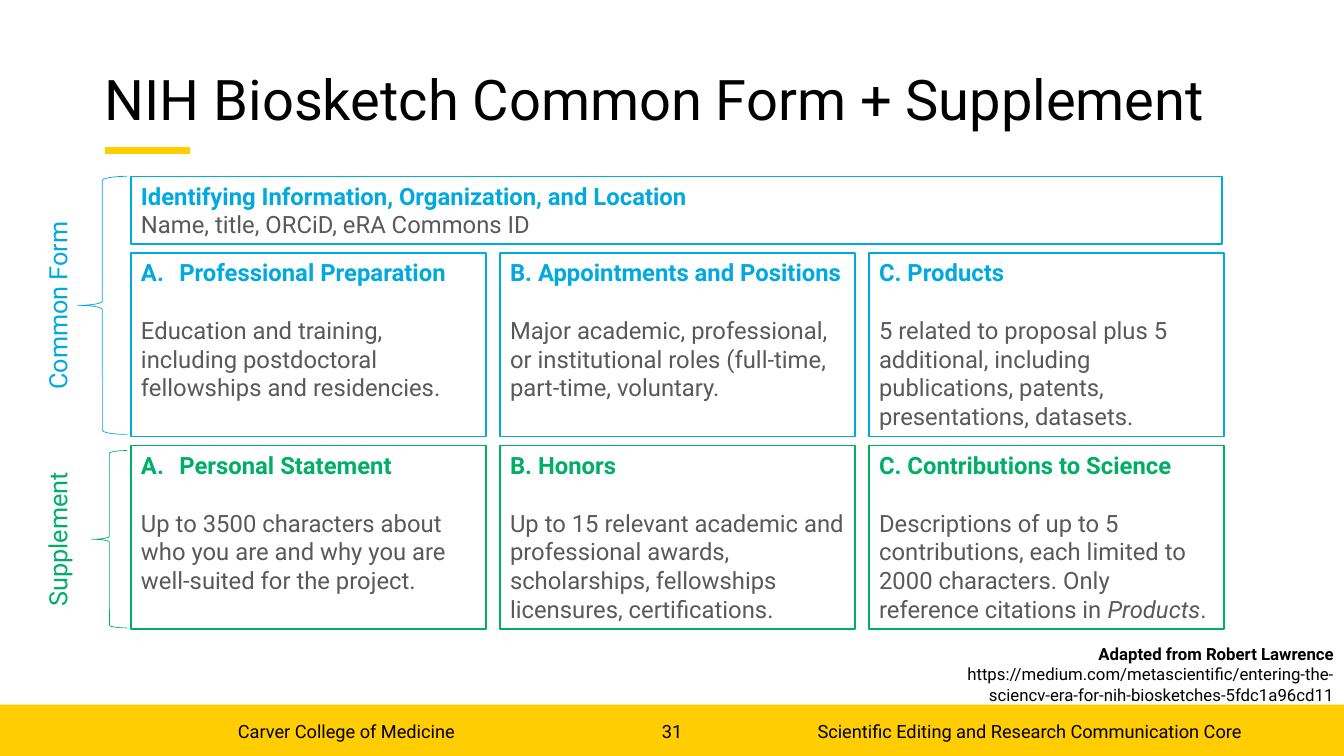
from lxml import etree
from pptx import Presentation
from pptx.dml.color import RGBColor
from pptx.enum.shapes import MSO_CONNECTOR, MSO_SHAPE
from pptx.enum.text import MSO_ANCHOR, MSO_AUTO_SIZE, PP_ALIGN
from pptx.oxml.ns import qn
from pptx.util import Inches, Pt

FONT = "Roboto"
BLACK, GRAY, GOLD, BLUE, GREEN = "000000", "595959", "FFCD00", "00A9E0", "00AF66"

TITLE = "NIH Biosketch Common Form + Supplement"
IDENTITY = ("Identifying Information, Organization, and Location",
            ["Name, title, ORCiD, eRA Commons ID"])

# Each section: name, colour, top of its boxes, brace (left, top, width, height),
# centre of the side label, and its boxes. Every second span of a body is italic.
SECTIONS = [
    ("Common Form", BLUE, 2.51, (0.77, 1.75, 0.49, 2.56), 3.03, [
        ("Professional Preparation",
         ["Education and training, including postdoctoral fellowships and residencies."]),
        ("B. Appointments and Positions",
         ["Major academic, professional, or institutional roles "
          "(full-time, part-time, voluntary."]),
        ("C. Products",
         ["5 related to proposal plus 5 additional, including publications, patents, "
          "presentations, datasets."]),
    ]),
    ("Supplement", GREEN, 4.42, (0.91, 4.47, 0.35, 1.76), 5.35, [
        ("Personal Statement",
         ["Up to 3500 characters about who you are and why you are well-suited "
          "for the project."]),
        ("B. Honors",
         ["Up to 15 relevant academic and professional awards, scholarships, "
          "fellowships licensures, certifications."]),
        ("C. Contributions to Science",
         ["Descriptions of up to 5 contributions, each limited to 2000 characters. "
          "Only reference citations in ", "Products", "."]),
    ]),
]
SOURCE = ("Adapted from Robert Lawrence",
          "https://medium.com/metascientific/entering-the-sciencv-era-for-nih-biosketches-5fdc1a96cd11")
# Footer: text, position, alignment, anchor, wrap
FOOTER = [
    ("Carver College of Medicine", (2.36, 7.15, 3.16, 0.35),
     PP_ALIGN.LEFT, MSO_ANCHOR.TOP, False),
    ("31", (6.34, 7.15, 0.65, 0.26), PP_ALIGN.CENTER, MSO_ANCHOR.TOP, True),
    ("Scientific Editing and Research Communication Core", (7.19, 7.05, 5.12, 0.4),
     PP_ALIGN.RIGHT, MSO_ANCHOR.MIDDLE, True),
]
LEFT, BOX_WIDTH, BOX_HEIGHT, COLUMN_STEP = 1.3, 3.52, 1.82, 3.66
LABEL_WIDTH, LABEL_HEIGHT, LABEL_CENTER = 2.24, 0.4, 0.57


def color(value):
    return RGBColor.from_string(value)


def inches(lengths):
    return [Inches(length) for length in lengths]


def style(para, size, tint, bold=False, align=PP_ALIGN.LEFT):
    para.alignment = align
    font = para.font
    font.name, font.size, font.bold = FONT, Pt(size), bold
    font.color.rgb = color(tint)


def remove_insets(frame):
    frame.margin_left = frame.margin_top = frame.margin_right = frame.margin_bottom = 0


def add_shape(page, kind, place, fill=None, line=None, width=1):
    shape = page.shapes.add_shape(kind, *inches(place))
    shape.shadow.inherit = False
    if fill:
        shape.fill.solid()
        shape.fill.fore_color.rgb = color(fill)
    else:
        shape.fill.background()
    if line:
        shape.line.color.rgb = color(line)
        shape.line.width = Pt(width)
    else:
        shape.line.fill.background()
    return shape


def add_text(page, place, lines, size, tint, align, bold_first=False):
    box = page.shapes.add_textbox(*inches(place))
    frame = box.text_frame
    frame.word_wrap = True
    frame.text = "\n".join(lines)
    for index, para in enumerate(frame.paragraphs):
        style(para, size, tint, bold_first and index == 0, align)
    return box


def number_with_letter(para):
    """Give the paragraph an automatic "A." with a hanging indent."""
    properties = para._p.get_or_add_pPr()
    properties.set("marL", str(Inches(0.38)))
    properties.set("indent", str(-Inches(0.38)))
    etree.SubElement(properties, qn("a:buFont"), typeface="+mj-lt")
    etree.SubElement(properties, qn("a:buAutoNum"), type="alphaUcPeriod")


def add_card(page, place, tint, heading, body, gap=0, numbered=False):
    frame = add_shape(page, MSO_SHAPE.RECTANGLE, place, line=tint).text_frame
    frame.word_wrap = True
    frame.vertical_anchor = MSO_ANCHOR.TOP
    head = frame.paragraphs[0]
    head.text = heading
    if numbered:
        number_with_letter(head)
    style(head, 17, tint, bold=True)
    para = frame.add_paragraph()
    para.space_before = Pt(gap)
    style(para, 17, GRAY)
    for index, words in enumerate(body):
        span = para.add_run()
        span.text = words
        if index % 2:
            span.font.italic = True


def add_frame(page):
    """Draw the title, its rule, and the footer band."""
    rule = page.shapes.add_connector(MSO_CONNECTOR.STRAIGHT, *inches((1.04, 1.49, 1.88, 1.49)))
    rule.line.color.rgb = color(GOLD)
    rule.line.width = Pt(5)
    etree.SubElement(rule._element.spPr, qn("a:effectLst"))
    add_shape(page, MSO_SHAPE.RECTANGLE, (0, 6.99, 13.33, 0.51), fill=GOLD)

    title = page.shapes.title
    title.left, title.top, title.width, title.height = inches((1.04, 0.54, 11.25, 0.95))
    frame = title.text_frame
    frame.text = TITLE
    frame.auto_size = MSO_AUTO_SIZE.NONE
    frame.vertical_anchor = MSO_ANCHOR.MIDDLE
    remove_insets(frame)
    frame.paragraphs[0].line_spacing = 0.9
    style(frame.paragraphs[0], 40, BLACK)

    for text, place, align, anchor, wrap in FOOTER:
        frame = add_text(page, place, [text], 13, BLACK, align).text_frame
        frame.word_wrap = wrap
        frame.vertical_anchor = anchor
        remove_insets(frame)


def add_section(page, name, tint, top, brace, center, cards):
    for column, (heading, body) in enumerate(cards):
        place = (LEFT + column * COLUMN_STEP, top, BOX_WIDTH, BOX_HEIGHT)
        add_card(page, place, tint, heading, body, gap=21, numbered=column == 0)
    place = (LABEL_CENTER - LABEL_WIDTH / 2, center - LABEL_HEIGHT / 2,
             LABEL_WIDTH, LABEL_HEIGHT)
    add_text(page, place, [name], 18, tint, PP_ALIGN.CENTER).rotation = 270
    add_shape(page, MSO_SHAPE.LEFT_BRACE, brace, line=tint, width=0.5)


def main():
    deck = Presentation()
    deck.slide_width, deck.slide_height = inches((13.33, 7.5))
    page = deck.slides.add_slide(deck.slide_layouts[5])
    add_frame(page)
    add_card(page, (LEFT, 1.75, 10.82, 0.67), BLUE, *IDENTITY)
    for section in SECTIONS:
        add_section(page, *section)
    add_text(page, (8.98, 6.34, 4.35, 0.71), SOURCE, 12, BLACK, PP_ALIGN.RIGHT, bold_first=True)
    deck.save("out.pptx")


if __name__ == "__main__":
    main()
